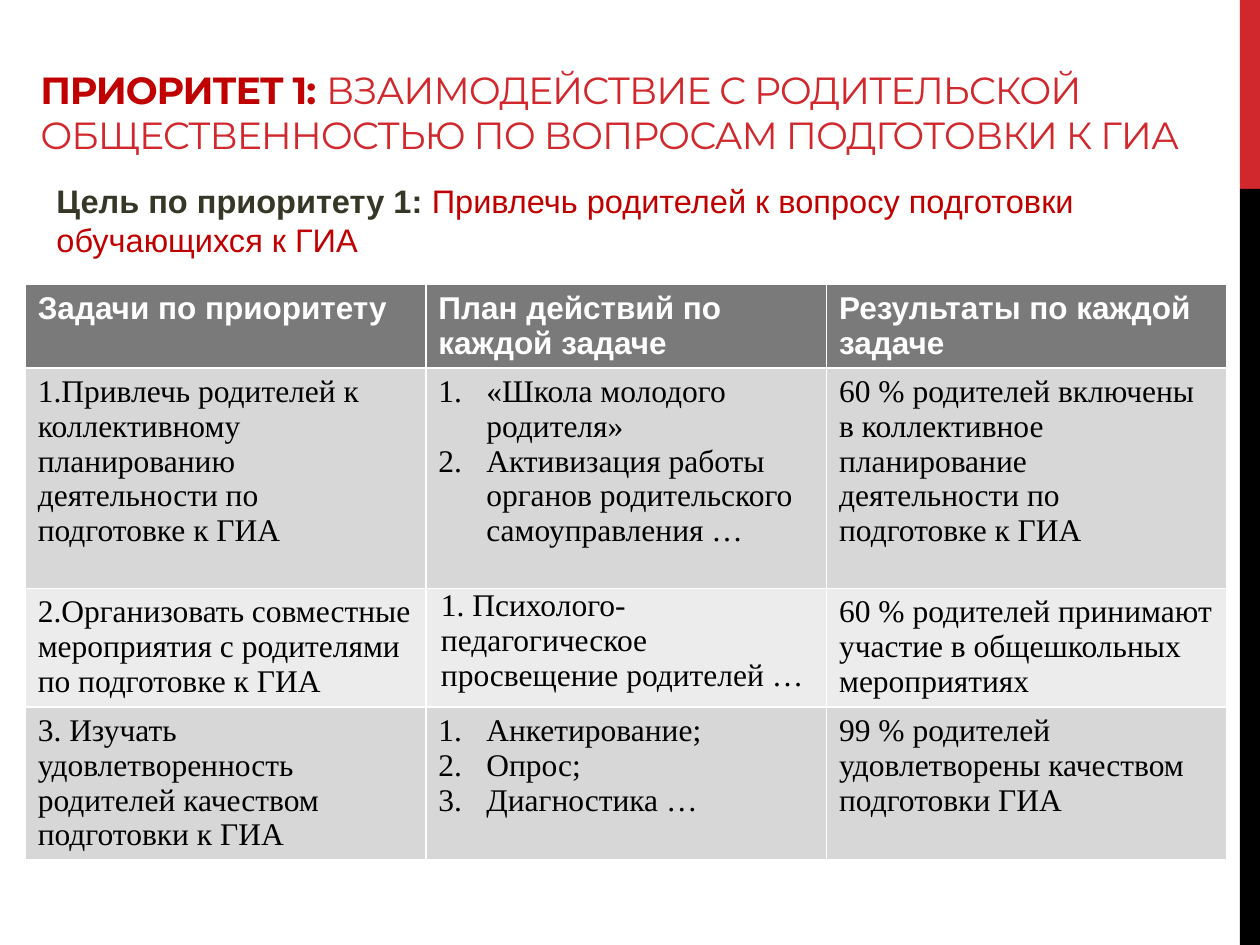
from lxml.etree import SubElement
from pptx import Presentation
from pptx.dml.color import RGBColor
from pptx.enum.shapes import MSO_SHAPE
from pptx.enum.text import MSO_ANCHOR, MSO_AUTO_SIZE, PP_ALIGN
from pptx.oxml.ns import qn
from pptx.util import Inches, Pt

RED = RGBColor(0xD1, 0x28, 0x2E)
DARK_RED = RGBColor(0xC0, 0x00, 0x00)
OLIVE = RGBColor(0x37, 0x37, 0x27)
BLACK = RGBColor(0x00, 0x00, 0x00)
WHITE = RGBColor(0xFF, 0xFF, 0xFF)
HEADER_GREY = RGBColor(0x7A, 0x7A, 0x7A)
BAND_GREY = RGBColor(0xD7, 0xD7, 0xD7)
LIGHT_GREY = RGBColor(0xEC, 0xEC, 0xEC)


def add_run(paragraph, text, font, size, color, bold=False):
    run = paragraph.add_run()
    run.text = text
    run.font.name = font
    run.font.size = Pt(size)
    run.font.bold = bold
    run.font.color.rgb = color
    return run


def number_paragraph(paragraph):
    properties = paragraph._p.get_or_add_pPr()
    properties.set("marL", str(Inches(0.38)))
    properties.set("indent", str(Inches(-0.38)))
    SubElement(properties, qn("a:buFont"), typeface="+mj-lt")
    SubElement(properties, qn("a:buAutoNum"), type="arabicPeriod")


prs = Presentation()
prs.slide_width = Inches(10)
prs.slide_height = Inches(7.5)
slide = prs.slides.add_slide(prs.slide_layouts[5])

for top, height, color in [(0, 1.5, RED), (1.5, 6, BLACK)]:
    stripe = slide.shapes.add_shape(
        MSO_SHAPE.RECTANGLE, Inches(9.84), Inches(top), Inches(0.16), Inches(height))
    stripe.shadow.inherit = False
    stripe.fill.solid()
    stripe.fill.fore_color.rgb = color
    stripe.line.fill.background()

title = slide.shapes.title
title.left, title.top = Inches(0.22), Inches(0.36)
title.width, title.height = Inches(9.5), Inches(0.94)
title.text_frame.auto_size = MSO_AUTO_SIZE.NONE
title.text_frame.word_wrap = True
title.text_frame.vertical_anchor = MSO_ANCHOR.BOTTOM
heading = title.text_frame.paragraphs[0]
heading.alignment = PP_ALIGN.LEFT
for text, color, bold in [
    ("ПРИОРИТЕТ 1: ", DARK_RED, True),
    ("ВЗАИМОДЕЙСТВИЕ С РОДИТЕЛЬСКОЙ ОБЩЕСТВЕННОСТЬЮ "
     "ПО ВОПРОСАМ ПОДГОТОВКИ К ГИА", RED, False),
]:
    run = add_run(heading, text, "Montserrat", 21.6, color, bold)
    run._r.get_or_add_rPr().set("spc", "-60")

rows = [
    ["Задачи по приоритету", "План действий по каждой задаче",
     "Результаты по каждой задаче"],
    ["1.Привлечь родителей к коллективному планированию деятельности по подготовке к ГИА",
     ["«Школа молодого родителя»",
      "Активизация работы органов родительского самоуправления …"],
     "60 % родителей включены в коллективное планирование деятельности по подготовке к ГИА"],
    ["2.Организовать совместные мероприятия с родителями по подготовке к ГИА",
     "1. Психолого-педагогическое просвещение родителей …",
     "60 % родителей принимают участие в общешкольных мероприятиях"],
    ["3. Изучать удовлетворенность родителей качеством подготовки к ГИА",
     ["Анкетирование;", "Опрос;", "Диагностика …"],
     "99 % родителей удовлетворены качеством подготовки ГИА"],
]
row_heights = [0.65, 1.75, 0.94, 1.21]
row_fills = [HEADER_GREY, BAND_GREY, LIGHT_GREY, BAND_GREY]

plan = slide.shapes.add_table(
    len(rows), 3, Inches(0.2), Inches(2.26), Inches(9.53), Inches(sum(row_heights))).table
for column in plan.columns:
    column.width = Inches(3.18)
for r, (row, height, fill) in enumerate(zip(rows, row_heights, row_fills)):
    plan.rows[r].height = Inches(height)
    is_header = r == 0
    for c, content in enumerate(row):
        cell = plan.cell(r, c)
        cell.fill.solid()
        cell.fill.fore_color.rgb = fill
        numbered = isinstance(content, list)
        for i, text in enumerate(content if numbered else [content]):
            frame = cell.text_frame
            paragraph = frame.add_paragraph() if i else frame.paragraphs[0]
            if numbered:
                number_paragraph(paragraph)
            add_run(paragraph, text, "Arial" if is_header else "Times New Roman", 18,
                    WHITE if is_header else BLACK, is_header)

parent_education = plan.cell(2, 1)
parent_education.margin_left = parent_education.margin_right = Inches(0.12)
parent_education.margin_top = parent_education.margin_bottom = Inches(0)

goal = slide.shapes.add_textbox(Inches(0.23), Inches(1.39), Inches(9), Inches(0.63))
goal.text_frame.word_wrap = True
goal_line = goal.text_frame.paragraphs[0]
goal_line.space_before = Pt(3.7)
goal_line._p.get_or_add_pPr().set("marL", str(Inches(0.12)))
add_run(goal_line, "Цель по приоритету 1: ", "Arial", 18.6, OLIVE, True)
add_run(goal_line, "Привлечь родителей к вопросу подготовки обучающихся к ГИА",
        "Arial", 18.6, DARK_RED)

prs.save("out.pptx")
